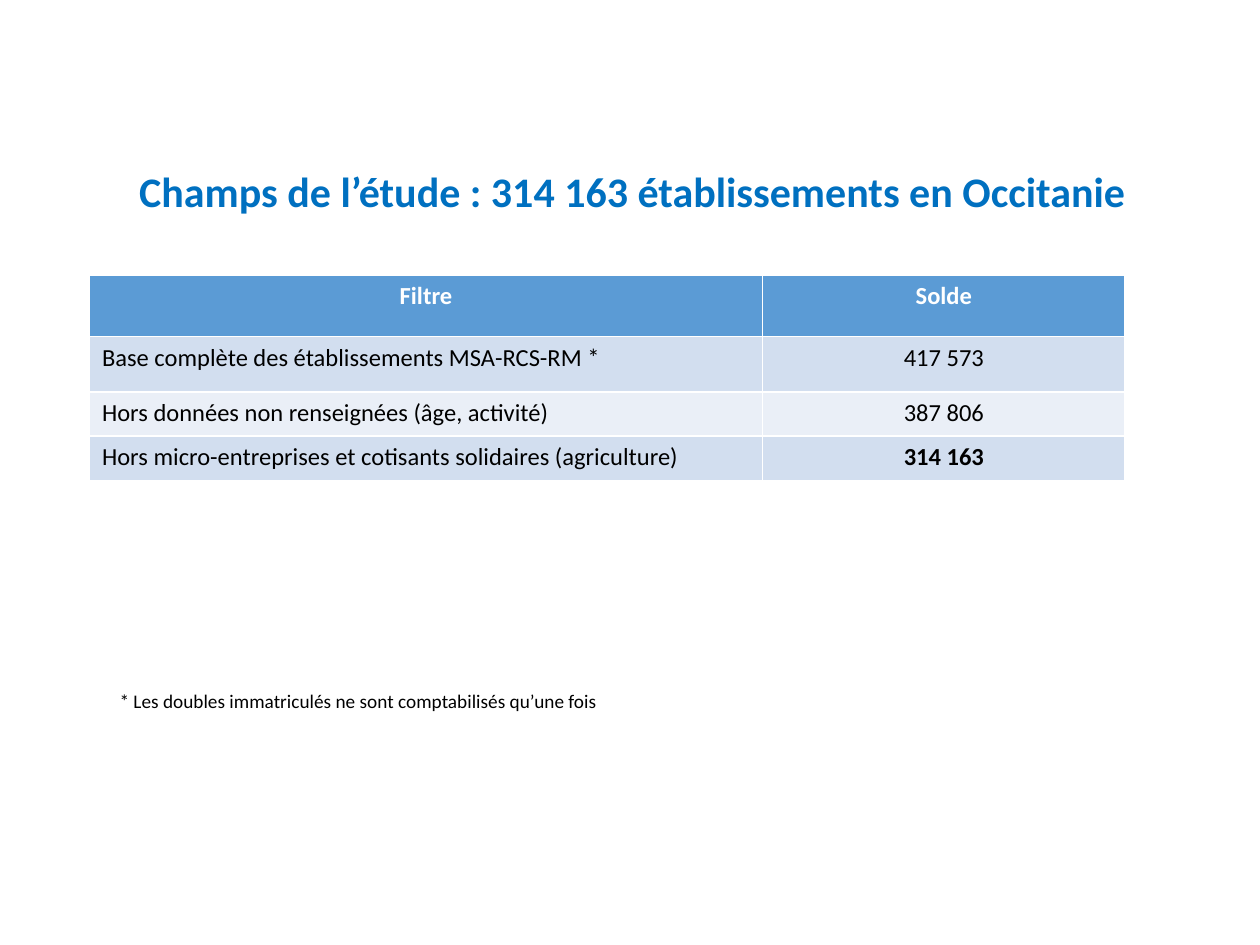
from dataclasses import dataclass

from pptx import Presentation
from pptx.dml.color import RGBColor
from pptx.enum.text import MSO_ANCHOR, MSO_AUTO_SIZE, PP_ALIGN
from pptx.util import Inches, Pt

LEFT, CENTER = PP_ALIGN.LEFT, PP_ALIGN.CENTER
MIDDLE = MSO_ANCHOR.MIDDLE
FIXED, GROW = MSO_AUTO_SIZE.NONE, MSO_AUTO_SIZE.SHAPE_TO_FIT_TEXT
TITLE_ONLY = 5


@dataclass(frozen=True)
class Theme:
    font: str = "Calibri"
    title: str = "0070C0"
    text: str = "000000"
    header_text: str = "FFFFFF"
    header: str = "5B9BD5"
    bands: tuple = ("D2DEEF", "EAEFF7")
    title_size: int = 24
    table_size: int = 14
    note_size: int = 11


THEME = Theme()


def write(tf, text, size, color=THEME.text, bold=False, align=LEFT, spacing=None):
    p = tf.paragraphs[0]
    p.alignment = align
    if spacing:
        p.line_spacing = spacing
    r = p.add_run()
    r.text = text
    r.font.name = THEME.font
    r.font.size = Pt(size)
    r.font.bold = bold
    r.font.color.rgb = RGBColor.from_string(color)


class SlideBuilder:
    def __init__(self, prs, theme):
        self.theme = theme
        self.width, self.height = prs.slide_width, prs.slide_height
        self.s = prs.slides.add_slide(prs.slide_layouts[TITLE_ONLY])

    def box(self, x, y, w, h):
        return (round(x * self.width), round(y * self.height),
                round(w * self.width), round(h * self.height))

    def title(self, text, *area):
        sp = self.s.shapes.title
        sp.left, sp.top, sp.width, sp.height = self.box(*area)
        tf = sp.text_frame
        tf.auto_size = FIXED
        tf.vertical_anchor = MIDDLE
        write(tf, text, self.theme.title_size, color=self.theme.title,
              bold=True, align=CENTER, spacing=0.9)

    def note(self, text, *area):
        tf = self.s.shapes.add_textbox(*self.box(*area)).text_frame
        tf.word_wrap = True
        tf.auto_size = GROW
        write(tf, text, self.theme.note_size)

    def table(self, rows, col_shares, row_heights, *area):
        t = self.theme
        x, y, w, h = self.box(*area)
        table = self.s.shapes.add_table(len(rows), len(col_shares), x, y, w, h).table
        for column, share in zip(table.columns, col_shares):
            column.width = round(w * share)
        for row, height in zip(table.rows, row_heights):
            row.height = Inches(height)
        for i, values in enumerate(rows):
            header, last = i == 0, i == len(rows) - 1
            fill = t.header if header else t.bands[(i - 1) % 2]
            for j, value in enumerate(values):
                cell = table.cell(i, j)
                cell.fill.solid()
                cell.fill.fore_color.rgb = RGBColor.from_string(fill)
                write(cell.text_frame, value, t.table_size,
                      color=t.header_text if header else t.text,
                      bold=header or (last and j == 1),
                      align=CENTER if header or j == 1 else LEFT)


def main():
    prs = Presentation()
    prs.slide_width, prs.slide_height = Inches(10), Inches(7.5)
    slide = SlideBuilder(prs, THEME)
    slide.title("Champs de l’étude : 314 163 établissements en Occitanie",
                0.071, 0.145, 0.862, 0.121)
    rows = [
        ("Filtre", "Solde"),
        ("Base complète des établissements MSA-RCS-RM *", "417 573"),
        ("Hors données non renseignées (âge, activité)", "387 806"),
        ("Hors micro-entreprises et cotisants solidaires (agriculture)", "314 163"),
    ]
    slide.table(rows, (0.65, 0.35), (0.49, 0.44, 0.35, 0.35),
                0.071, 0.291, 0.822, 0.217)
    slide.note("* Les doubles immatriculés ne sont comptabilisés qu’une fois",
               0.085, 0.723, 0.848, 0.039)
    prs.save("out.pptx")


if __name__ == "__main__":
    main()
